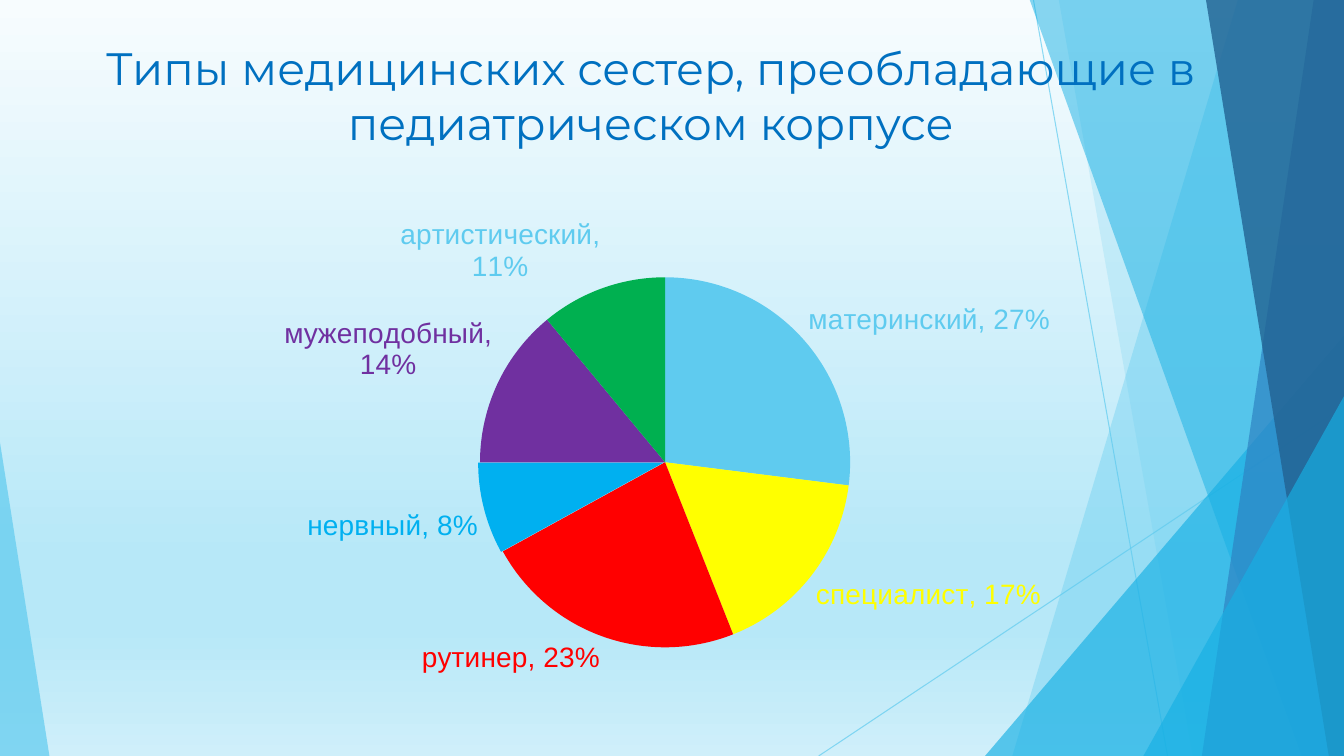
from dataclasses import dataclass

from lxml.etree import SubElement
from pptx import Presentation
from pptx.chart.data import CategoryChartData
from pptx.dml.color import RGBColor
from pptx.enum.chart import XL_CHART_TYPE, XL_LABEL_POSITION
from pptx.enum.shapes import MSO_CONNECTOR, MSO_SHAPE
from pptx.enum.text import MSO_ANCHOR, PP_ALIGN
from pptx.oxml import parse_xml
from pptx.oxml.ns import nsdecls, qn
from pptx.util import Inches, Pt

WIDTH, HEIGHT = 13.33, 7.5
TOP = -0.01


@dataclass(frozen=True)
class Theme:
    sky: str = "5FCBEF"
    azure: str = "17B0E4"
    blue: str = "2E83C3"
    navy: str = "226292"
    title: str = "0070C0"
    yellow: str = "FFFF00"
    red: str = "FF0000"
    bright_blue: str = "00B0F0"
    purple: str = "7030A0"
    green: str = "00B050"
    background: tuple = ((0, "F7FCFE"), (74, "B7E8F8"), (83, "B7E8F8"), (100, "CFEFFA"))
    title_font: str = "Montserrat"
    chart_font: str = "Arial"
    title_size: float = 32.4
    label_size: float = 20
    line_width: float = 0.75


THEME = Theme()

# Start, end
LINES = [((10.25, 0), (11.58, HEIGHT)), ((WIDTH, 4.03), (8.12, HEIGHT))]

# Bands reach the right edge: left corner at the top, at the bottom, colour, opacity
BACK_BANDS = [(12.28, 10.04, THEME.sky, 36), (10.5, 11.83, THEME.sky, 20)]
FRONT_BANDS = [
    (10.21, 12.91, THEME.azure, 50),
    (13.03, 11.92, THEME.blue, 70),
    (11.96, 13.18, THEME.navy, 80),
]

# Category, share, slice colour, label colour
NURSE_TYPES = [
    ("материнский", 27, THEME.sky, THEME.sky),
    ("специалист", 17, THEME.yellow, THEME.yellow),
    ("рутинер", 23, THEME.red, THEME.red),
    ("нервный", 8, THEME.bright_blue, THEME.bright_blue),
    ("мужеподобный", 14, THEME.purple, THEME.purple),
    ("артистический", 11, THEME.green, THEME.sky),
]
EXPLODED_SLICE = 3


class SlideBuilder:
    def __init__(self, slide, theme):
        self.slide = slide
        self.theme = theme

    def background(self):
        self.slide.background.fill.solid()
        properties = self.slide.background._cSld.bg.bgPr
        stops = "".join(
            f'<a:gs pos="{position * 1000}"><a:srgbClr val="{color}"/></a:gs>'
            for position, color in self.theme.background
        )
        gradient = parse_xml(
            f'<a:gradFill {nsdecls("a")} rotWithShape="1"><a:gsLst>{stops}</a:gsLst>'
            '<a:lin ang="5400000" scaled="0"/></a:gradFill>'
        )
        properties.replace(properties.find(qn("a:solidFill")), gradient)

    def paint(self, fill, color, opacity):
        """Apply a solid colour with the opacity given in percent."""
        fill.solid()
        fill.fore_color.rgb = RGBColor.from_string(color)
        color_element = fill._xPr.find(qn("a:solidFill"))[0]
        SubElement(color_element, qn("a:alpha")).set("val", str(opacity * 1000))

    def finish(self, shape, color, opacity):
        self.paint(shape.fill, color, opacity)
        shape.line.fill.background()
        shape.shadow.inherit = False

    def line(self, start, end):
        connector = self.slide.shapes.add_connector(
            MSO_CONNECTOR.STRAIGHT, *map(Inches, start + end)
        )
        connector.line.width = Pt(self.theme.line_width)
        self.paint(connector.line.fill, self.theme.sky, 70)
        SubElement(connector._element.spPr, qn("a:effectLst"))

    def band(self, top_left, bottom_left, color, opacity):
        outline = self.slide.shapes.build_freeform(
            Inches(top_left), Inches(TOP), scale=1.0
        )
        corners = [(WIDTH, TOP), (WIDTH, HEIGHT), (bottom_left, HEIGHT)]
        outline.add_line_segments([(Inches(x), Inches(y)) for x, y in corners], close=True)
        self.finish(outline.convert_to_shape(), color, opacity)

    def triangle(self, left, top, width, apex, color, opacity):
        """Draw a triangle standing on the bottom edge, apex from 0 (left) to 1 (right)."""
        shape = self.slide.shapes.add_shape(
            MSO_SHAPE.ISOSCELES_TRIANGLE,
            *map(Inches, (left, top, width, HEIGHT - top)),
        )
        shape.adjustments[0] = apex
        self.finish(shape, color, opacity)

    def title(self, text, left, top, width, height):
        box = self.slide.shapes.add_textbox(*map(Inches, (left, top, width, height)))
        text_frame = box.text_frame
        text_frame.word_wrap = True
        text_frame.vertical_anchor = MSO_ANCHOR.TOP
        text_frame.text = text
        paragraph = text_frame.paragraphs[0]
        paragraph.alignment = PP_ALIGN.CENTER
        font = paragraph.runs[0].font
        font.name = self.theme.title_font
        font.size = Pt(self.theme.title_size)
        font.color.rgb = RGBColor.from_string(self.theme.title)

    def style_label(self, font, color):
        font.name = self.theme.chart_font
        font.size = Pt(self.theme.label_size)
        font.bold = False
        font.color.rgb = RGBColor.from_string(color)

    def pie(self, nurse_types, left, top, width, height):
        data = CategoryChartData()
        data.categories = [f"{name}, {share}%" for name, share, *_ in nurse_types]
        data.add_series("Series 1", [share for _, share, *_ in nurse_types])
        chart = self.slide.shapes.add_chart(
            XL_CHART_TYPE.PIE, *map(Inches, (left, top, width, height)), data
        ).chart
        chart.has_legend = False
        chart.has_title = False
        chart.font.name = self.theme.chart_font
        chart.font.size = Pt(self.theme.label_size)
        plot = chart.plots[0]
        plot.vary_by_categories = True
        series = plot.series[0]
        labels = series.data_labels
        labels.show_value = False
        labels.show_category_name = True
        labels.position = XL_LABEL_POSITION.OUTSIDE_END
        self.style_label(labels.font, self.theme.sky)
        for index, (_, _, slice_color, label_color) in enumerate(nurse_types):
            point = series.points[index]
            point.format.fill.solid()
            point.format.fill.fore_color.rgb = RGBColor.from_string(slice_color)
            point.format.line.fill.background()
            self.style_label(point.data_label.font, label_color)
            point.data_label.position = XL_LABEL_POSITION.OUTSIDE_END
        for label in series._element.iter(qn("c:dLbl")):
            label.find(qn("c:showVal")).set("val", "0")
            label.find(qn("c:showCatName")).set("val", "1")
        exploded = series._element.findall(qn("c:dPt"))[EXPLODED_SLICE]
        explosion = parse_xml(f'<c:explosion {nsdecls("c")} val="1"/>')
        exploded.find(qn("c:spPr")).addprevious(explosion)
        self.place_plot(chart, 0.35, 0.15, 0.29, 0.76)

    def place_plot(self, chart, x, y, width, height):
        """Fix the plot area, in fractions of the chart."""
        area = chart._chartSpace.chart.plotArea
        for layout in area.findall(qn("c:layout")):
            area.remove(layout)
        area.insert(0, parse_xml(
            f'<c:layout {nsdecls("c")}><c:manualLayout><c:layoutTarget val="inner"/>'
            '<c:xMode val="edge"/><c:yMode val="edge"/>'
            f'<c:x val="{x}"/><c:y val="{y}"/><c:w val="{width}"/><c:h val="{height}"/>'
            '</c:manualLayout></c:layout>'
        ))


def main():
    presentation = Presentation()
    presentation.slide_width = Inches(WIDTH)
    presentation.slide_height = Inches(HEIGHT)
    slide = presentation.slides.add_slide(presentation.slide_layouts[6])
    builder = SlideBuilder(slide, THEME)
    builder.background()
    for start, end in LINES:
        builder.line(start, end)
    for band in BACK_BANDS:
        builder.band(*band)
    builder.triangle(9.77, 3.33, 3.56, 1, THEME.azure, 66)
    for band in FRONT_BANDS:
        builder.band(*band)
    builder.triangle(11.34, 3.93, 1.99, 1, THEME.azure, 66)
    builder.triangle(0, 4.39, 0.49, 0, THEME.sky, 70)
    builder.title("Типы медицинских сестер, преобладающие в педиатрическом корпусе",
                  0.49, 0.35, 11.93, 1.27)
    builder.pie(NURSE_TYPES, 0.33, 1.99, 12.66, 4.9)
    presentation.save("out.pptx")


if __name__ == "__main__":
    main()
